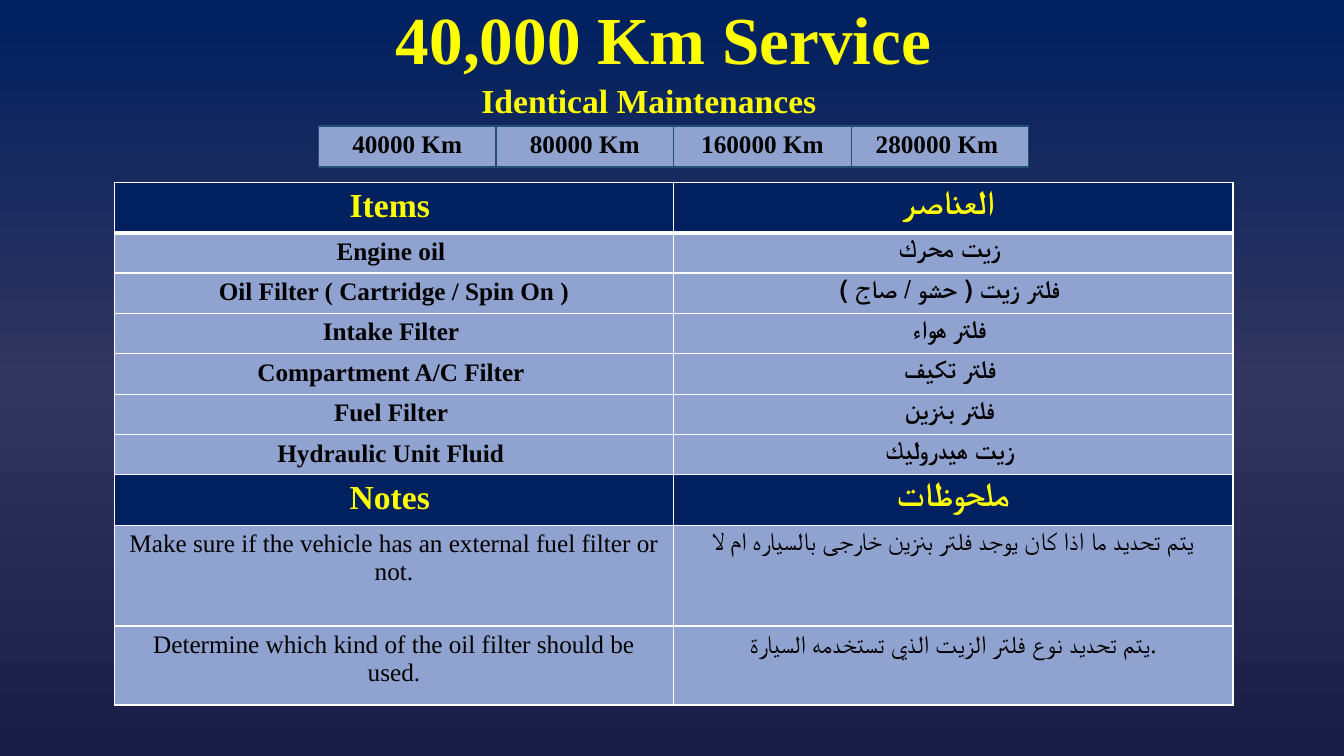
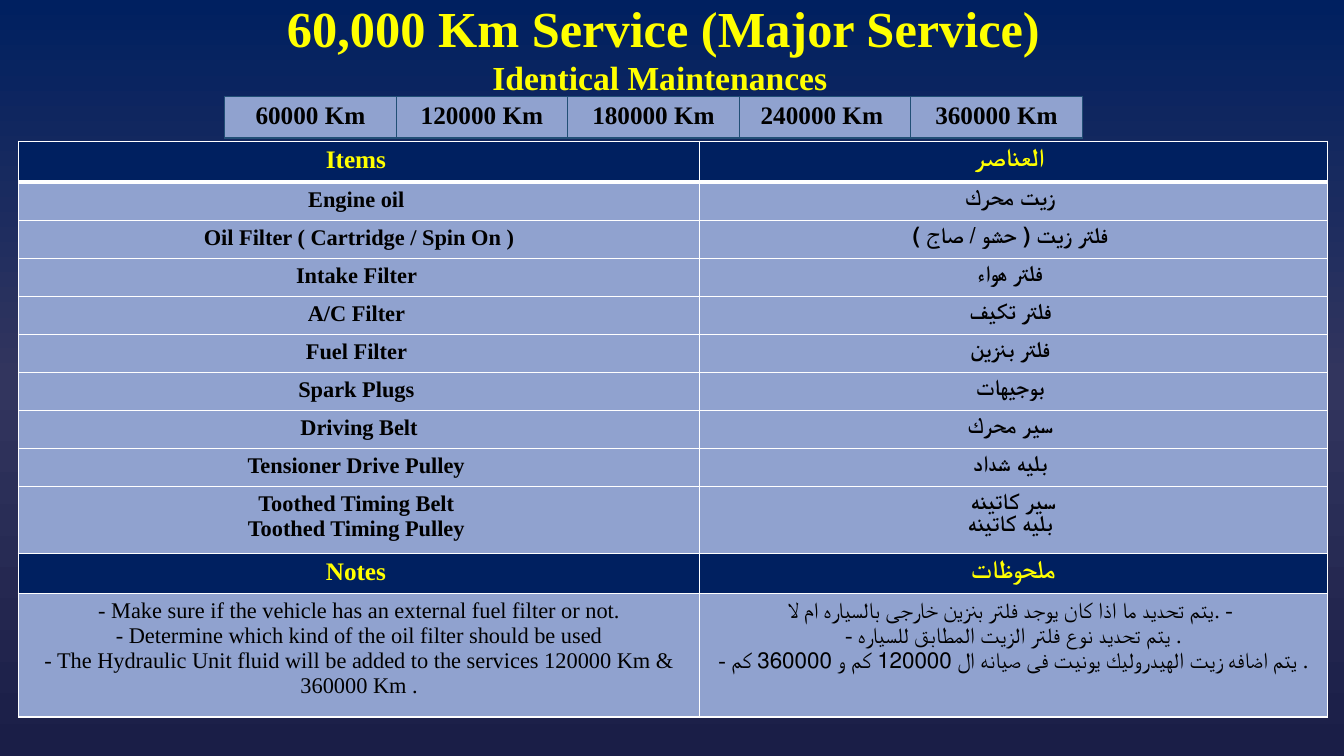
import copy

import pptx
import pptx.dml.color
import pptx.enum.text
import pptx.oxml
import pptx.oxml.ns
import pptx.util

COLORS = {
    "navy": "002060",
    "slate": "32355E",
    "indigo": "1A1E47",
    "yellow": "FFFF00",
    "periwinkle": "90A2CF",
    "steel": "224F76",
    "white": "FFFFFF",
    "black": "000000",
}
FONT = "Times New Roman"
COLUMNS, ROWS = 160, 90
UNIT = pptx.util.Inches(13.333) / COLUMNS

COMMON_ITEMS = [
    ("Engine oil ", "زيت محرك "),
    ("Oil Filter ( Cartridge / Spin On )", "فلتر زيت ( حشو / صاج ) "),
    ("Intake Filter ", "فلتر هواء "),
]
FUEL_FILTER = ("Fuel Filter ", "فلتر بنزين ")
CABIN_FILTER = "فلتر تكيف "


def grid(units):
    return round(units * UNIT)


def color(name):
    return pptx.dml.color.RGBColor.from_string(COLORS[name])


def write(frame, text, size, ink="black", bold=False, spacing=None):
    frame.word_wrap = True
    for index, line in enumerate(text.split("\n")):
        paragraph = frame.add_paragraph() if index else frame.paragraphs[0]
        paragraph.alignment = pptx.enum.text.PP_ALIGN.CENTER
        paragraph.line_spacing = spacing
        run = paragraph.add_run()
        run.text = line
        run.font.name = FONT
        run.font.size = pptx.util.Pt(size)
        run.font.bold = bold
        run.font.color.rgb = color(ink)


def outline(cell, ink, widths):
    properties = cell._tc.get_or_add_tcPr()
    for side, width in zip("LRTB", widths):
        properties.append(pptx.oxml.parse_xml(
            f'<a:ln{side} {pptx.oxml.ns.nsdecls("a")} w="{pptx.util.Pt(width)}">'
            f'<a:solidFill><a:srgbClr val="{COLORS[ink]}"/></a:solidFill></a:ln{side}>'
        ))


class ServiceDeck:
    def __init__(self):
        self.prs = pptx.Presentation()
        self.prs.slide_width = grid(COLUMNS)
        self.prs.slide_height = grid(ROWS)
        self.slide = None
        self.paint_master()

    def paint_master(self):
        fill = self.prs.slide_master.background.fill
        fill.gradient()
        fill.gradient_angle = 270
        stops = self.prs.slide_master.element.find(".//" + pptx.oxml.ns.qn("a:gsLst"))
        stops.append(copy.deepcopy(stops[-1]))
        for stop, name, position in zip(
            fill.gradient_stops, ("navy", "slate", "indigo"), (0, 0.5, 1)
        ):
            stop.color.rgb = color(name)
            stop.position = position

    def new_slide(self):
        self.slide = self.prs.slides.add_slide(self.prs.slide_layouts[6])

    def text(self, text, left, top, width, height, **style):
        box = self.slide.shapes.add_textbox(*map(grid, (left, top, width, height)))
        box.text_frame.vertical_anchor = pptx.enum.text.MSO_ANCHOR.MIDDLE
        write(box.text_frame, text, ink="yellow", bold=True, **style)

    def title(self, text, height, size):
        self.text(text, 10, 1.2, 138, height, size=size, spacing=0.9)

    def subtitle(self, left, top):
        self.text("Identical Maintenances ", left, top, 65.5, 6, size=24)

    def table(self, left, top, widths, heights):
        table = self.slide.shapes.add_table(
            len(heights), len(widths),
            *map(grid, (left, top, sum(widths), sum(heights)))
        ).table
        table.first_row = table.horz_banding = False
        for column, width in zip(table.columns, widths):
            column.width = grid(width)
        for row, height in zip(table.rows, heights):
            row.height = grid(height)
        return table

    def cell(self, cell, text, fill, border, widths, **style):
        outline(cell, border, widths)
        cell.fill.solid()
        cell.fill.fore_color.rgb = color(fill)
        write(cell.text_frame, text, **style)

    def distances(self, labels, left, top, width):
        table = self.table(left, top, [width] * len(labels), [4.9])
        for cell, label in zip(table.iter_cells(), labels):
            self.cell(cell, label, "periwinkle", "steel", (1, 1, 1, 2), size=18, bold=True)

    def checklist(self, items, notes, left, top, widths, heights, heading_size, body_size):
        headings = {0: ("Items ", "العناصر "), len(items) + 1: ("Notes ", "ملحوظات")}
        content = [headings[0], *items, headings[len(items) + 1], *notes]
        table = self.table(left, top, widths, heights)
        for index, pair in enumerate(content):
            heading = index in headings
            edges = (1, 1, 3 if index == 1 else 1, 3 if index == 0 else 1)
            for cell, text in zip(table.rows[index].cells, pair):
                self.cell(
                    cell, text, "navy" if heading else "periwinkle", "white", edges,
                    size=heading_size if heading else body_size,
                    ink="yellow" if heading else "black",
                    bold=index <= len(items) + 1,
                )


def main():
    deck = ServiceDeck()

    deck.new_slide()
    deck.title("40,000 Km Service", 7.8, 48)
    deck.distances(["40000 Km", "80000 Km", "160000 Km", "280000 Km "], 37.9, 15, 21.15)
    deck.subtitle(45, 8.9)
    deck.checklist(
        items=COMMON_ITEMS + [
            ("Compartment A/C Filter ", CABIN_FILTER),
            FUEL_FILTER,
            ("Hydraulic Unit Fluid ", "زيت هيدروليك "),
        ],
        notes=[
            ("Make sure if the vehicle has an external fuel filter or not.",
             "يتم تحديد ما اذا كان يوجد فلتر بنزين خارجى بالسياره ام لا"),
            ("Determine which kind of the oil filter should be used.",
             "يتم تحديد نوع فلتر الزيت الذي تستخدمه السيارة."),
        ],
        left=13.6, top=21.7, widths=[66.6] * 2,
        heights=[6] + [4.8] * 6 + [6, 12, 9.4],
        heading_size=24, body_size=18,
    )

    deck.new_slide()
    deck.title("60,000 Km Service (Major Service)", 5, 36)
    deck.subtitle(46.3, 6.2)
    deck.checklist(
        items=COMMON_ITEMS + [
            ("A/C Filter ", CABIN_FILTER),
            FUEL_FILTER,
            ("Spark Plugs ", "بوجيهات "),
            ("Driving Belt", "سير محرك "),
            ("Tensioner Drive Pulley ", "بليه شداد "),
            ("Toothed Timing Belt \nToothed Timing Pulley ", "سير كاتينه\nبليه كاتينه "),
        ],
        notes=[
            ("- Make sure if the vehicle has an external fuel filter or not.\n"
             "- Determine which kind of the oil filter should be used\n"
             "- The Hydraulic Unit fluid will be added to the services 120000 Km & 360000 Km .",
             "يتم تحديد ما اذا كان يوجد فلتر بنزين خارجى بالسياره ام لا. - \n"
             "- يتم تحديد نوع فلتر الزيت المطابق للسياره .\n"
             "- يتم اضافه زيت الهيدروليك يونيت فى صيانه ال 120000 كم و 360000 كم ."),
        ],
        left=2.2, top=16.8, widths=[81.1, 74.7],
        heights=[4.9] + [4.53] * 8 + [7.95, 4.8, 14.7],
        heading_size=18, body_size=16,
    )
    deck.distances(
        ["60000 Km", "120000 Km", "180000 Km", "240000 Km ", "360000 Km"], 26.75, 11.5, 20.42
    )

    deck.prs.save("out.pptx")


if __name__ == "__main__":
    main()
